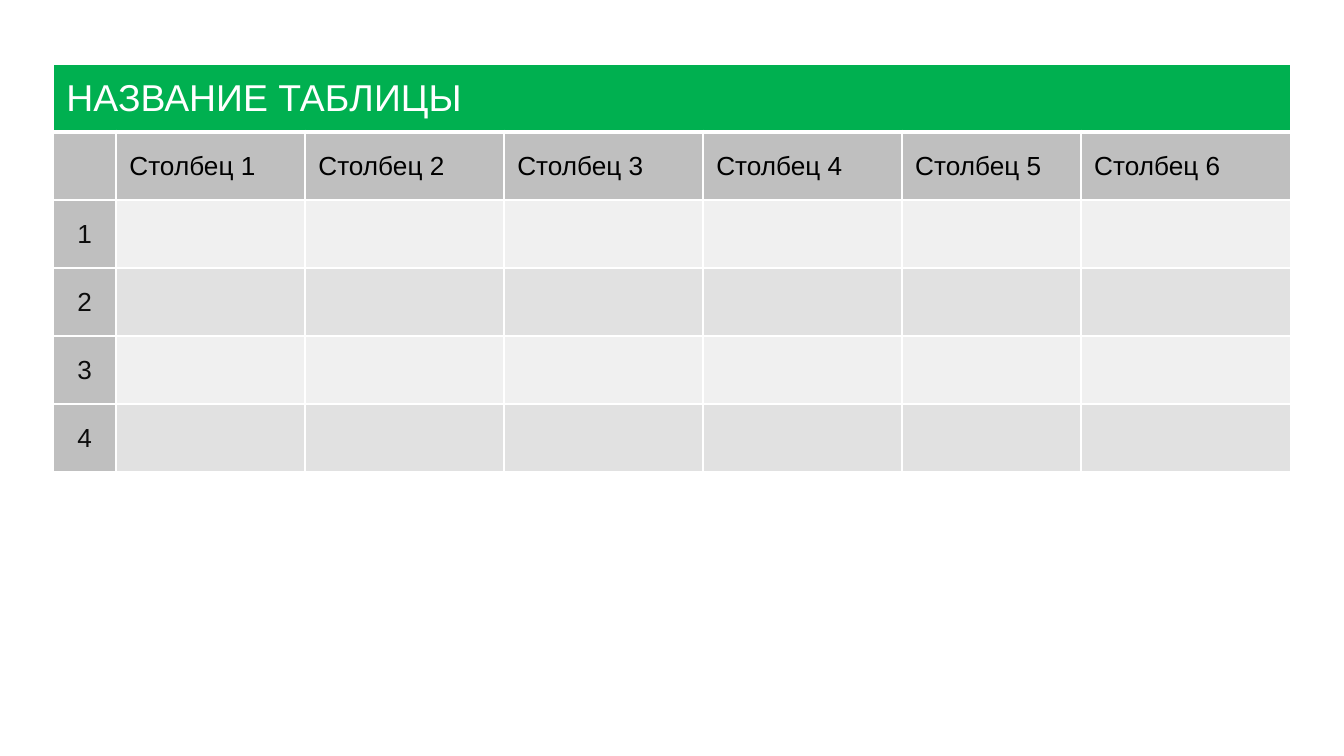
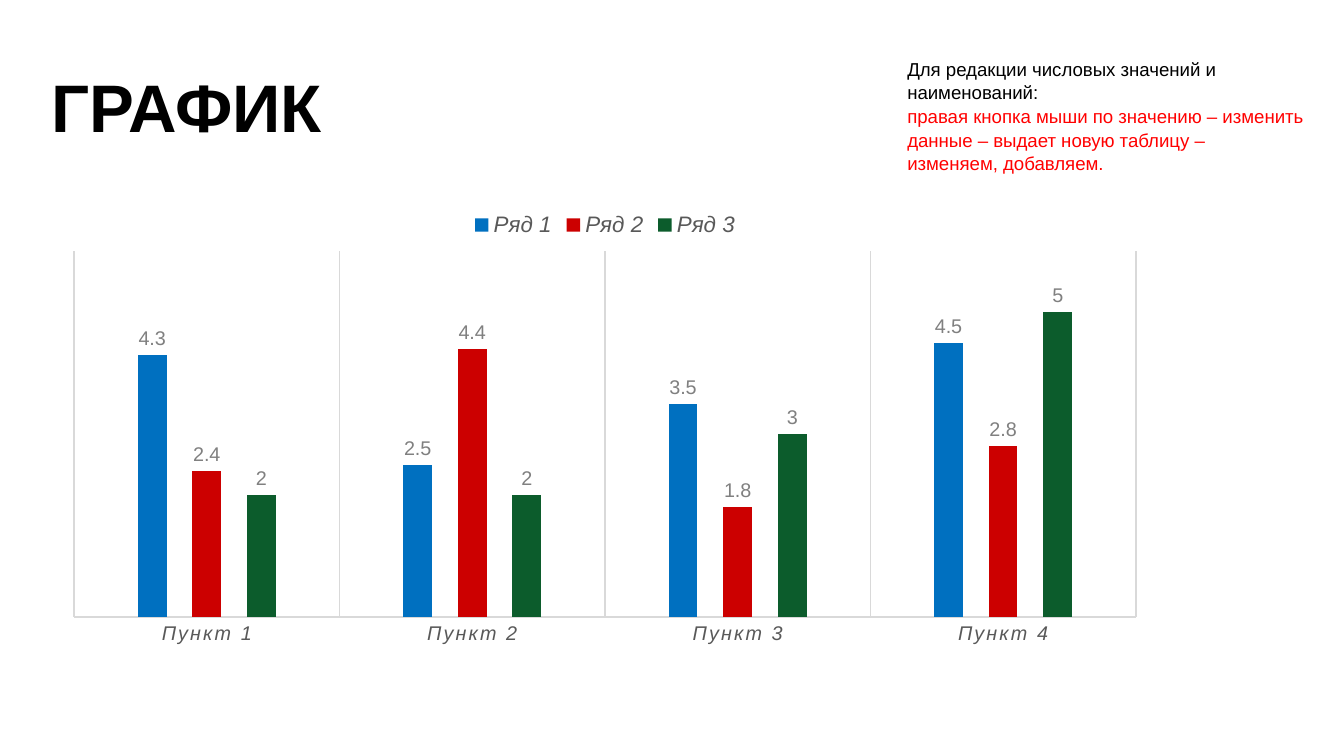
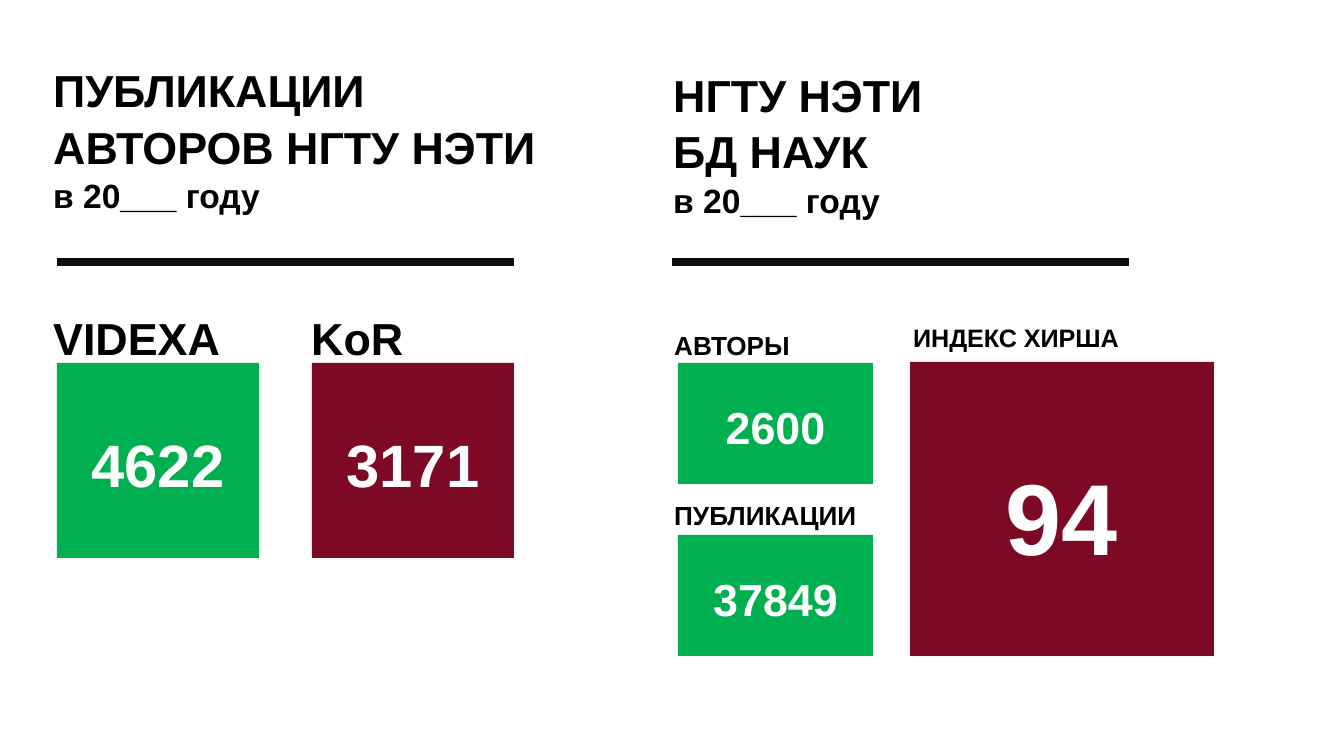
from dataclasses import dataclass

from lxml import etree
from pptx import Presentation
from pptx import util as u
from pptx.chart.data import CategoryChartData
from pptx.dml.color import RGBColor
from pptx.enum import chart as charts, shapes, text
from pptx.oxml import ns

PAGE_WIDTH, PAGE_HEIGHT = 1344, 756
EMU_PER_PX = 9144000 / PAGE_WIDTH


@dataclass(frozen=True)
class Theme:
    font: str = "Arial"
    # Colours
    black: str = "000000"
    ink: str = "0D0D0D"
    white: str = "FFFFFF"
    green: str = "00B050"
    wine: str = "7D0925"
    red: str = "FF0000"
    header: str = "BFBFBF"
    bands: tuple = ("F0F0F0", "E1E1E1")
    series: tuple = ("0070C0", "CC0000", "0C5C2C")
    grid: str = "D9D9D9"
    axis_text: str = "595959"
    label_text: str = "808080"
    # Type sizes
    title: float = 36
    heading: float = 24
    table_title: float = 20
    subheading: float = 18
    caption: float = 14
    legend: float = 12
    axis: float = 10.6
    note: float = 10
    # Line spacing
    spacing: float = 1.05
    wide_spacing: float = 1.1


THEME = Theme()


def px(length):
    return u.Emu(round(length * EMU_PER_PX))


def color(code):
    return RGBColor.from_string(code)


def set_font(font, size, code, bold=None, italic=None):
    font.name, font.size = THEME.font, u.Pt(size)
    font.bold, font.italic = bold, italic
    font.color.rgb = color(code)


def write(frame, content, size=THEME.caption, code=THEME.black, bold=False,
          align=None, anchor=None, spacing=None):
    """Fill a frame; each line is a string or a (string, overrides) pair."""
    frame.word_wrap = True
    if anchor is not None:
        frame.vertical_anchor = anchor
    lines = [content] if isinstance(content, str) else content
    for index, line in enumerate(lines):
        words, changes = (line, {}) if isinstance(line, str) else line
        para = frame.paragraphs[0] if index == 0 else frame.add_paragraph()
        para.alignment, para.line_spacing = align, spacing
        span = para.add_run()
        span.text = words
        set_font(span.font, **{"size": size, "code": code, "bold": bold, **changes})


def add_text(page, bounds, content, spacing=THEME.spacing, **style):
    box = page.shapes.add_textbox(*map(px, bounds))
    write(box.text_frame, content, spacing=spacing, **style)


def add_tile(page, bounds, number, fill, size):
    tile = page.shapes.add_shape(shapes.MSO_SHAPE.RECTANGLE, *map(px, bounds))
    tile.shadow.inherit = False
    tile.fill.solid()
    tile.fill.fore_color.rgb = color(fill)
    tile.line.fill.background()
    write(tile.text_frame, number, size=size, code=THEME.white, bold=True,
          align=text.PP_ALIGN.CENTER, anchor=text.MSO_ANCHOR.MIDDLE,
          spacing=THEME.wide_spacing)


def add_rule(page, left, top, width):
    rule = page.shapes.add_connector(
        shapes.MSO_CONNECTOR.STRAIGHT, px(left), px(top), px(left + width), px(top))
    rule.line.color.rgb = color(THEME.ink)
    rule.line.width = u.Pt(4.5)
    etree.SubElement(rule._element.spPr, ns.qn("a:effectLst"))


def paint_cell(cell, fill, bottom=1):
    """Give a cell white borders and a plain fill."""
    properties = cell._tc.get_or_add_tcPr()
    for side, width in (("L", 1), ("R", 1), ("T", 1), ("B", bottom)):
        border = etree.SubElement(properties, ns.qn(f"a:ln{side}"), w=str(u.Pt(width)))
        paint = etree.SubElement(border, ns.qn("a:solidFill"))
        etree.SubElement(paint, ns.qn("a:srgbClr"), val=THEME.white)
    cell.fill.solid()
    cell.fill.fore_color.rgb = color(fill)


def fill_cell(cell, words, **style):
    write(cell.text_frame, words, **style)
    cell.vertical_anchor = text.MSO_ANCHOR.MIDDLE


def add_grid(page, left, top, widths, row_height, title, row_count):
    total_rows = row_count + 2
    frame = page.shapes.add_table(
        total_rows, len(widths), px(left), px(top),
        px(sum(widths)), px(row_height * total_rows))
    table = frame.table
    table.first_row = table.horz_banding = False
    for column, width in zip(table.columns, widths):
        column.width = px(width)

    # Fills: title row, header row and column, then alternating bands
    for row in range(total_rows):
        table.rows[row].height = px(row_height)
        for column in range(len(widths)):
            if row == 0:
                fill = THEME.green
            elif row == 1 or column == 0:
                fill = THEME.header
            else:
                fill = THEME.bands[row % 2]
            paint_cell(table.cell(row, column), fill, bottom=3 if row == 0 else 1)

    # Wording
    table.cell(0, 0).merge(table.cell(0, len(widths) - 1))
    fill_cell(table.cell(0, 0), title, size=THEME.table_title, code=THEME.white)
    for column in range(1, len(widths)):
        fill_cell(table.cell(1, column), f"Столбец {column}")
    for number in range(1, row_count + 1):
        fill_cell(table.cell(number + 1, 0), str(number), code=THEME.ink,
                  align=text.PP_ALIGN.CENTER)


def add_columns(page, bounds, categories, rows):
    data = CategoryChartData()
    data.categories = categories
    for name, values in rows.items():
        data.add_series(name, values)
    chart = page.shapes.add_chart(
        charts.XL_CHART_TYPE.COLUMN_CLUSTERED, *map(px, bounds), data).chart
    set_font(chart.font, THEME.note, THEME.black)
    chart.has_title = False

    # Legend
    chart.has_legend = True
    chart.legend.position = charts.XL_LEGEND_POSITION.TOP
    chart.legend.include_in_layout = False
    set_font(chart.legend.font, THEME.legend, THEME.axis_text, italic=True)

    # Axes
    chart.value_axis.visible = False
    chart.value_axis.has_major_gridlines = False
    axis = chart.category_axis
    axis.major_tick_mark = charts.XL_TICK_MARK.NONE
    axis.has_major_gridlines = True
    for line in (axis.format.line, axis.major_gridlines.format.line):
        line.color.rgb = color(THEME.grid)
        line.width = u.Pt(0.75)
    set_font(axis.tick_labels.font, THEME.axis, THEME.axis_text, italic=True)
    for properties in axis._element.iter(ns.qn("a:defRPr")):
        properties.set("spc", "120")

    # Columns and their labels
    plot = chart.plots[0]
    plot.vary_by_categories = False
    plot.gap_width, plot.overlap = 444, -90
    for series, code in zip(plot.series, THEME.series):
        series.format.fill.solid()
        series.format.fill.fore_color.rgb = color(code)
        labels = series.data_labels
        labels.show_value = True
        labels.position = charts.XL_LABEL_POSITION.OUTSIDE_END
        set_font(labels.font, THEME.axis, THEME.label_text)


def build_table_page(page):
    add_grid(page, 53, 64, (63, 189, 199, 199, 199, 179, 210), 68,
             "НАЗВАНИЕ ТАБЛИЦЫ", 4)


def build_chart_page(page):
    add_columns(page, (52, 198, 1106, 456),
                [f"Пункт {number}" for number in range(1, 5)],
                {"Ряд 1": (4.3, 2.5, 3.5, 4.5),
                 "Ряд 2": (2.4, 4.4, 1.8, 2.8),
                 "Ряд 3": (2, 2, 3, 5)})
    red = {"code": THEME.red}
    add_text(page, (894, 50, 439, 126), [
        "Для редакции числовых значений и наименований:",
        ("правая кнопка мыши по значению – изменить данные – выдает новую таблицу –", red),
        ("изменяем, добавляем.", red)], size=THEME.note)
    add_text(page, (38, 51, 488, 105), "ГРАФИК", size=THEME.title, bold=True,
             spacing=THEME.wide_spacing)


def build_figures_page(page):
    # Headings with the rules under them
    year = ("в 20___ году", {"size": THEME.subheading})
    heading = {"size": THEME.heading, "bold": True}
    add_text(page, (40, 39, 539, 198), ["ПУБЛИКАЦИИ", "АВТОРОВ НГТУ НЭТИ", year],
             anchor=text.MSO_ANCHOR.MIDDLE, **heading)
    add_text(page, (660, 58, 446, 146), ["НГТУ НЭТИ", "БД НАУК", year], **heading)
    for left in (57, 672):
        add_rule(page, left, 262, 457)

    # Numbers
    for bounds, number, fill, size in (
            ((57, 363, 202, 195), "4622", THEME.green, 32),
            ((312, 363, 202, 195), "3171", THEME.wine, 32),
            ((678, 363, 195, 121), "2600", THEME.green, 24),
            ((678, 535, 195, 121), "37849", THEME.green, 24),
            ((910, 362, 304, 294), "94", THEME.wine, 54)):
        add_tile(page, bounds, number, fill, size)

    # Captions above the numbers
    for bounds, caption, size in (
            ((40, 302, 224, 122), "VIDEXA", THEME.heading),
            ((298, 301, 183, 122), "KoR", THEME.heading),
            ((661, 321, 152, 99), "АВТОРЫ", THEME.caption),
            ((661, 491, 227, 99), "ПУБЛИКАЦИИ", THEME.caption),
            ((900, 314, 305, 95), "ИНДЕКС ХИРША", 13.5)):
        add_text(page, bounds, caption, size=size, bold=True)


def main():
    deck = Presentation()
    deck.slide_width, deck.slide_height = px(PAGE_WIDTH), px(PAGE_HEIGHT)
    for build in (build_table_page, build_chart_page, build_figures_page):
        build(deck.slides.add_slide(deck.slide_layouts[6]))
    deck.save("out.pptx")


if __name__ == "__main__":
    main()
